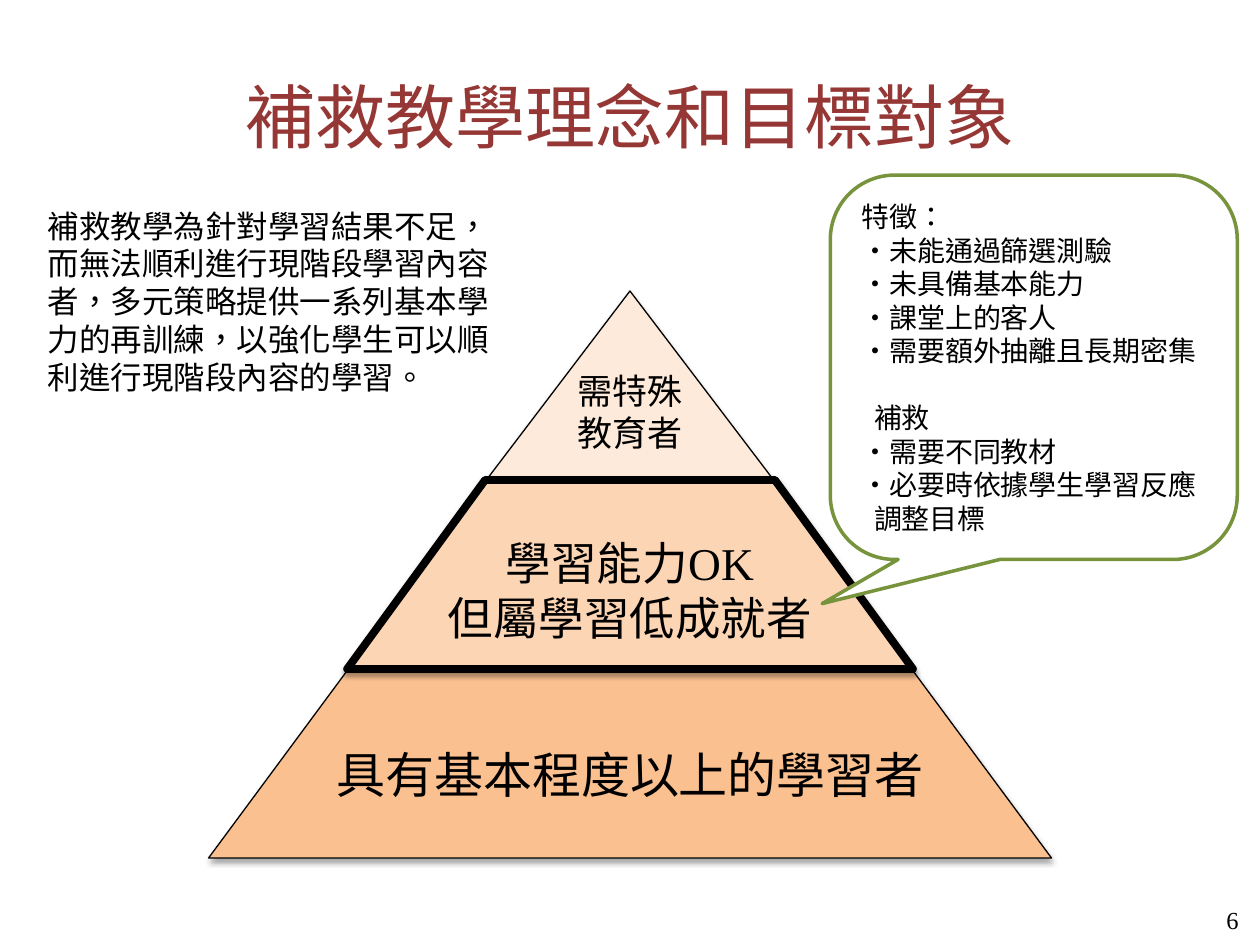
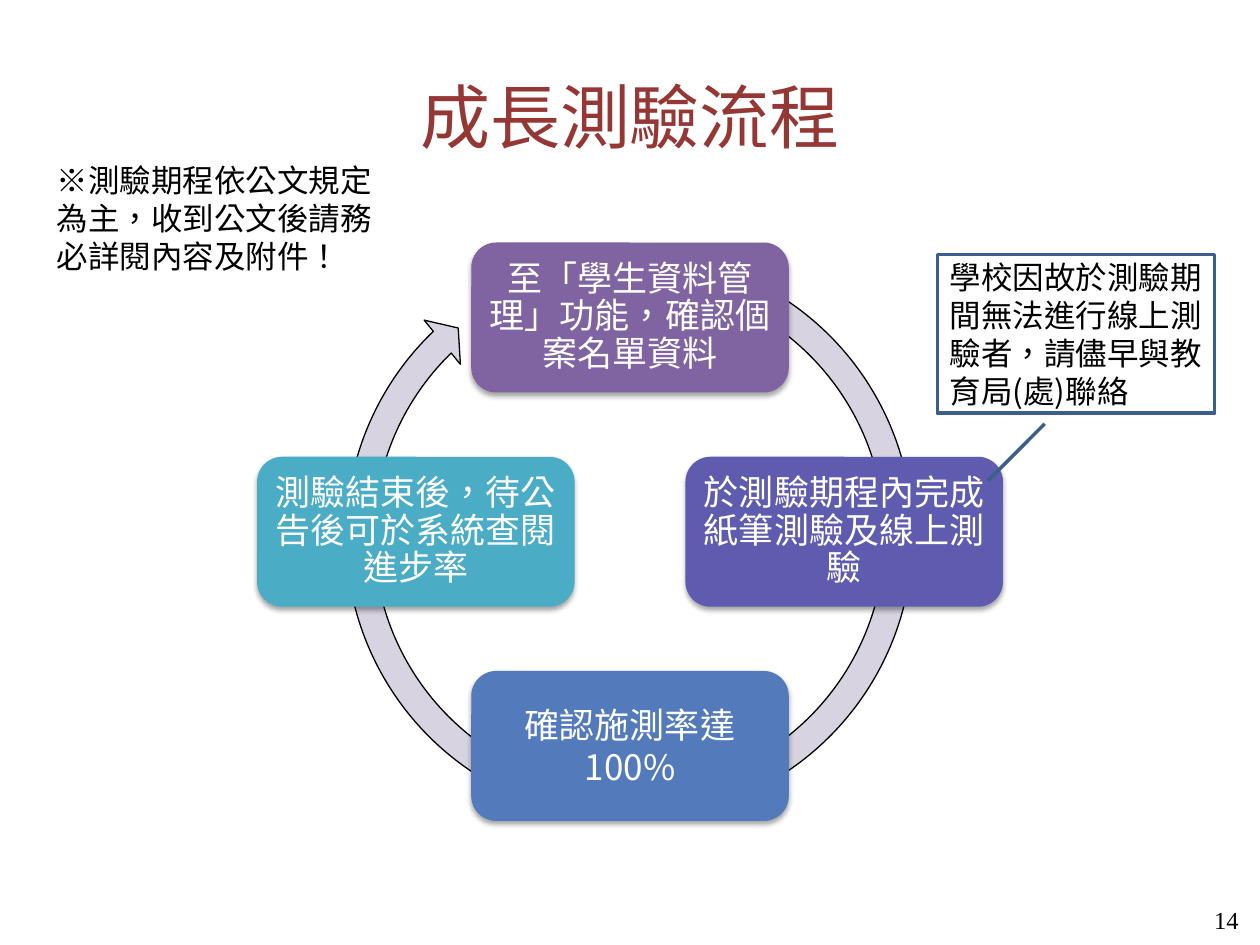
from math import cos, pi, sin

from lxml.etree import SubElement
from pptx import Presentation
from pptx.dml.color import RGBColor
from pptx.enum.lang import MSO_LANGUAGE_ID
from pptx.enum.shapes import MSO_SHAPE
from pptx.enum.text import MSO_ANCHOR, PP_ALIGN
from pptx.oxml.ns import qn
from pptx.util import Inches, Pt

TITLE_COLOUR, INK, WHITE = "953735", "000000", "FFFFFF"
SERIF, SANS, CJK = "Times New Roman", "Arial", "Noto Sans CJK SC"
CENTRED = {"alignment": PP_ALIGN.CENTER}
LEFT = {"alignment": PP_ALIGN.LEFT}
RIGHT = {"alignment": PP_ALIGN.RIGHT}
MIDDLE = {"vertical_anchor": MSO_ANCHOR.MIDDLE, "word_wrap": True}
TOP = {"vertical_anchor": MSO_ANCHOR.TOP, "word_wrap": True}

LEARNER_TRAITS = [
    "特徵：", "‧未能通過篩選測驗", "‧未具備基本能力", "‧課堂上的客人",
    "‧需要額外抽離且長期密集", "補救", "‧需要不同教材",
    "‧必要時依據學生學習反應", "調整目標",
]
TEST_STEPS = [
    ("至「學生資料管理」功能，確認個案名單資料", "8064A2", 0.9),
    ("於測驗期程內完成紙筆測驗及線上測驗", "5F5BAE", 0.9),
    ("確認施測率達100%", "537ABA", 1.0),
    ("測驗結束後，待公告後可於系統查閱進步率", "4BACC6", 0.9),
]


def colour(hex_value):
    """Turn a hex string into a colour."""
    return RGBColor.from_string(hex_value)


def apply(target, formats):
    """Set each format value on the target."""
    for name, value in formats.items():
        setattr(target, name, value)


def place(element, left, top, width, height):
    """Position an element, in inches."""
    apply(element, {"left": Inches(left), "top": Inches(top),
                    "width": Inches(width), "height": Inches(height)})


def write(holder, lines, size, face=CJK, ink=INK, layout=CENTRED, frame=MIDDLE):
    """Write lines of uniformly styled text, one paragraph each."""
    text_frame = holder.text_frame
    text_frame.text = "\n".join(lines)
    apply(text_frame, frame)
    for paragraph in text_frame.paragraphs:
        apply(paragraph, layout)
        for run in paragraph.runs:
            apply(run.font, {"size": Pt(size), "name": face,
                             "language_id": MSO_LANGUAGE_ID.TRADITIONAL_CHINESE})
            run.font.color.rgb = colour(ink)
            SubElement(run.font._element, qn("a:ea"), typeface=CJK)


def add_shadow(shape):
    """Give a shape a soft shadow just below it."""
    effects = shape._element.spPr.find(qn("a:effectLst"))
    shadow = SubElement(effects, qn("a:outerShdw"), blurRad=str(Pt(3.1)),
                        dist=str(Pt(1.8)), dir="5400000", rotWithShape="0")
    tint = SubElement(shadow, qn("a:srgbClr"), val=INK)
    SubElement(tint, qn("a:alpha"), val="35000")


def add_figure(slide, kind, box, fill, outline=None, width=0.75, adjust=(), shadow=False):
    """Add a filled preset shape with an optional outline and shadow."""
    figure = slide.shapes.add_shape(kind, *map(Inches, box))
    figure.shadow.inherit = False
    figure.fill.solid()
    figure.fill.fore_color.rgb = colour(fill)
    if outline:
        figure.line.color.rgb = colour(outline)
        figure.line.width = Pt(width)
    else:
        figure.line.fill.background()
    for index, value in enumerate(adjust):
        figure.adjustments[index] = value
    if shadow:
        add_shadow(figure)
    return figure


def add_note(slide, box, text, size=18, **style):
    """Add a wrapping text box."""
    note = slide.shapes.add_textbox(*map(Inches, box))
    write(note, [text], size, **style)


def add_titled_slide(deck, title, number):
    """Add a slide with the shared title style and page number."""
    slide = deck.slides.add_slide(deck.slide_layouts[5])
    place(slide.shapes.title, 0.5, 0.29, 9, 1.25)
    write(slide.shapes.title, [title], 40, SERIF, TITLE_COLOUR)
    add_note(slide, (7.6, 7.1, 2.33, 0.4), number, 14,
             face=SERIF, layout=RIGHT, frame=MIDDLE)
    return slide


def add_pyramid(slide):
    """Stack the three learner groups, drawing the outlined one last."""
    tier_height, peak = 1.5, 2.31
    raised = {"margin_bottom": Inches(0.38)}
    wide = {"margin_left": Inches(0.04), "margin_right": Inches(0.04)}
    tiers = [
        (0, MSO_SHAPE.ISOSCELES_TRIANGLE, 2.28, "FDEADA", 0.75, (),
         "需特殊教育者", 20, SANS, raised),
        (2, MSO_SHAPE.TRAPEZOID, 6.69, "FAC090", 0.75, (0.74,),
         "具有基本程度以上的學習者", 28, SANS, {}),
        (1, MSO_SHAPE.TRAPEZOID, 4.49, "FCD5B5", 4.5, (0.73,),
         "學習能力OK\v但屬學習低成就者", 26, SERIF, wide),
    ]
    for level, kind, base, fill, border, adjust, label, size, face, margins in tiers:
        box = (5 - base / 2, peak + level * tier_height, base, tier_height)
        tier = add_figure(slide, kind, box, fill, INK, border, adjust, shadow=True)
        write(tier, [label], size, face, frame=MIDDLE | margins)


def add_traits_callout(slide):
    """List the traits of the middle group in a speech bubble."""
    bubble = add_figure(slide, MSO_SHAPE.ROUNDED_RECTANGULAR_CALLOUT,
                        (6.59, 1.39, 3.23, 3.05), WHITE, "77933C", 2,
                        (-0.52, 0.615, 0.167))
    write(bubble, LEARNER_TRAITS, 16, layout=LEFT)
    for paragraph in bubble.text_frame.paragraphs:
        if paragraph.text in ("補救", "調整目標"):
            paragraph._p.get_or_add_pPr().set("marL", str(Inches(0.1)))
        if paragraph.text == "補救":
            paragraph.space_before = Pt(19)


def add_test_cycle(slide):
    """Set the test steps clockwise around a circular arrow."""
    centre_x, centre_y, radius = 5, 4.22, 1.7
    card_width, card_height = 2.52, 1.19
    margins = dict.fromkeys(
        ("margin_left", "margin_right", "margin_top", "margin_bottom"), Inches(0.07))
    add_figure(slide, MSO_SHAPE.CIRCULAR_ARROW, (2.63, 1.89, 4.73, 4.73),
               "D8D3E0", INK, adjust=(0.047, 2.729, 135.615, 175.539, 0.048))
    for index, (step, fill, spacing) in enumerate(TEST_STEPS):
        angle = 2 * pi * index / len(TEST_STEPS)
        left = centre_x + radius * sin(angle) - card_width / 2
        top = centre_y - radius * cos(angle) - card_height / 2
        card = add_figure(slide, MSO_SHAPE.ROUNDED_RECTANGLE,
                          (left, top, card_width, card_height), fill, shadow=True)
        write(card, [step], 20, ink=WHITE, frame=MIDDLE | margins,
              layout=CENTRED | {"line_spacing": spacing})


def main():
    """Build the two slides and save them."""
    deck = Presentation()
    apply(deck, {"slide_width": Inches(10), "slide_height": Inches(7.5)})

    audience = add_titled_slide(deck, "補救教學理念和目標對象", "6")
    add_pyramid(audience)
    add_traits_callout(audience)
    add_note(audience, (0.28, 1.59, 3.86, 1.62),
             "補救教學為針對學習結果不足，而無法順利進行現階段學習內容者，"
             "多元策略提供一系列基本學力的再訓練，"
             "以強化學生可以順利進行現階段內容的學習。", layout=LEFT, frame=TOP)

    process = add_titled_slide(deck, "成長測驗流程", "14")
    add_test_cycle(process)
    add_note(process, (0.35, 1.23, 2.91, 1.01),
             "※測驗期程依公文規定為主，收到公文後請務必詳閱內容及附件！",
             layout=LEFT, frame=TOP)
    contact = add_figure(process, MSO_SHAPE.LINE_CALLOUT_1, (7.44, 2.02, 2.2, 1.26),
                         WHITE, "3A5F8C", 2, (1.067, 0.387, 1.427, 0.181))
    write(contact, ["學校因故於測驗期間無法進行線上測驗者，請儘早與教育局(處)聯絡"],
          18, layout=LEFT)

    deck.save("out.pptx")


if __name__ == "__main__":
    main()
